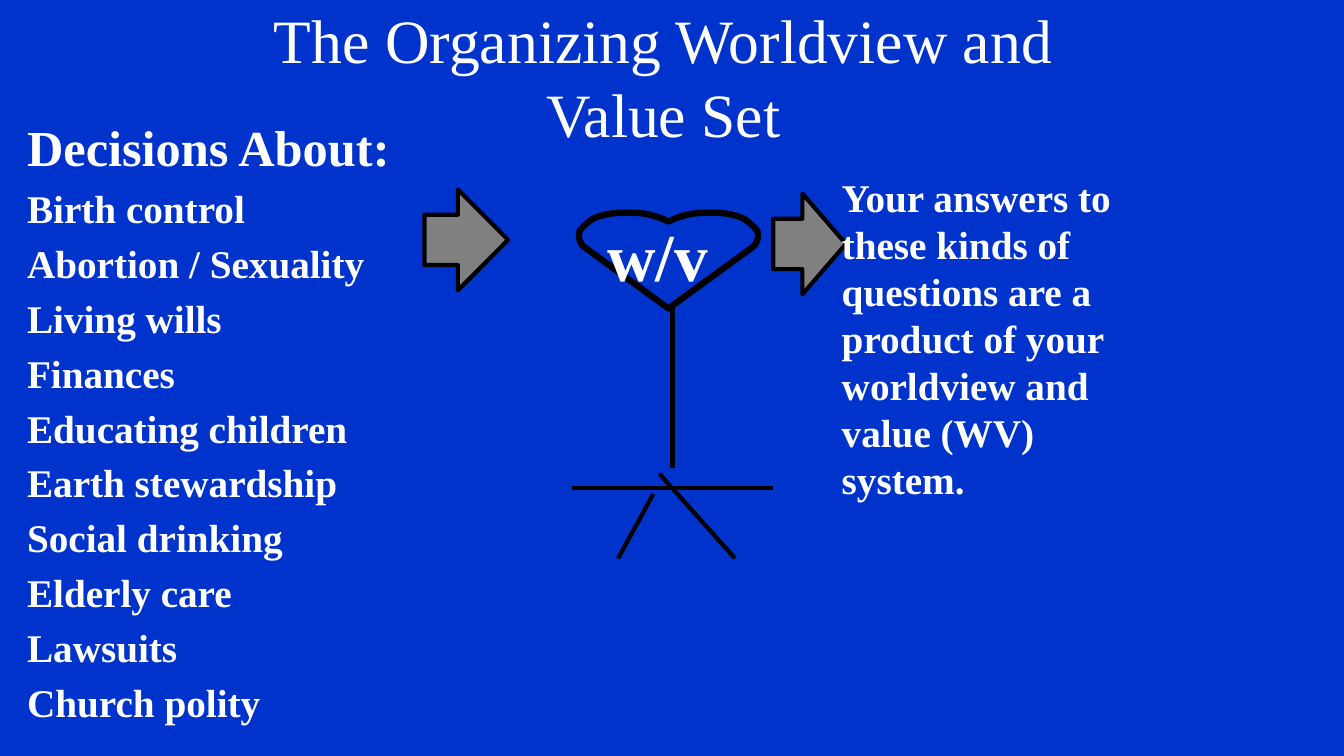
from dataclasses import dataclass

from lxml import etree
from pptx import Presentation
from pptx.dml.color import RGBColor
from pptx.enum.shapes import MSO_CONNECTOR, MSO_SHAPE
from pptx.enum.text import MSO_ANCHOR, MSO_AUTO_SIZE, PP_ALIGN
from pptx.oxml.ns import qn
from pptx.slide import Slide
from pptx.text.text import _Paragraph as Paragraph
from pptx.util import Inches, Pt

BLUE = RGBColor(0x00, 0x33, 0xCC)
WHITE = RGBColor(0xFF, 0xFF, 0xFF)
BLACK = RGBColor(0x00, 0x00, 0x00)
GRAY = RGBColor(0x80, 0x80, 0x80)
FONT = "Times New Roman"

Point = tuple[float, float]


@dataclass(frozen=True)
class Box:
    left: float
    top: float
    width: float
    height: float

    def lengths(self) -> tuple[Inches, ...]:
        return tuple(Inches(v) for v in (self.left, self.top, self.width, self.height))


@dataclass(frozen=True)
class Line:
    text: str
    size: int


@dataclass(frozen=True)
class TextBlock:
    box: Box
    lines: list[Line]


@dataclass(frozen=True)
class Stroke:
    start: Point
    end: Point


DECISIONS = [
    "Birth control", "Abortion / Sexuality", "Living wills", "Finances",
    "Educating children", "Earth stewardship", "Social drinking",
    "Elderly care", "Lawsuits", "Church polity",
]
ANSWER = ("Your answers to these kinds of questions are a product of "
          "your worldview and value (WV) system.")
TEXT_BLOCKS = [
    TextBlock(Box(0.17, 1.1, 4.58, 6.73),
              [Line("Decisions About:", 36)] + [Line(text, 28) for text in DECISIONS]),
    TextBlock(Box(8.25, 1.67, 3.42, 3.37), [Line(ANSWER, 28)]),
    TextBlock(Box(5.76, 2.08, 1.62, 0.91), [Line(" w/v", 48)]),
]
ARROWS = [Box(4.21, 1.88, 0.83, 1), Box(7.67, 1.92, 0.72, 1)]
STICK_STROKES = [
    Stroke((6.67, 3.06), (6.67, 4.64)),
    Stroke((6.48, 4.9), (6.13, 5.54)),
    Stroke((6.54, 4.7), (7.29, 5.54)),
    Stroke((5.67, 4.84), (7.67, 4.84)),
]

# Left half of the heart: Bezier segments from the notch, then the bottom tip.
HEART_CENTER = 6.63
HEART_NOTCH = (6.63, 2.2)
HEART_TIP = (6.63, 3.06)
HEART_CURVES = [
    ((6.6, 2.18), (6.52, 2.15), (6.48, 2.14)),
    ((6.38, 2.11), (6.29, 2.11), (6.18, 2.11)),
    ((6.08, 2.11), (5.98, 2.13), (5.9, 2.16)),
    ((5.83, 2.2), (5.78, 2.25), (5.75, 2.29)),
    ((5.73, 2.35), (5.75, 2.4), (5.78, 2.44)),
]
CURVE_STEPS = 8


def bezier(start: Point, first: Point, second: Point, end: Point) -> list[Point]:
    """Points along a cubic curve, without its start."""
    points = []
    for step in range(1, CURVE_STEPS + 1):
        t = step / CURVE_STEPS
        weights = ((1 - t) ** 3, 3 * t * (1 - t) ** 2, 3 * t * t * (1 - t), t ** 3)
        x, y = (sum(w * p[axis] for w, p in zip(weights, (start, first, second, end)))
                for axis in (0, 1))
        points.append((x, y))
    return points


def heart_outline() -> list[Point]:
    left = [HEART_NOTCH]
    for curve in HEART_CURVES:
        left += bezier(left[-1], *curve)
    right = [(2 * HEART_CENTER - x, y) for x, y in reversed(left[1:])]
    return left + [HEART_TIP] + right


def add_span(para: Paragraph, text: str, size: int, bold: bool) -> None:
    span = para.add_run()
    span.text = text
    span.font.name = FONT
    span.font.size = Pt(size)
    span.font.bold = bold
    span.font.color.rgb = WHITE


def add_title(page: Slide) -> None:
    title = page.shapes.title
    title.left, title.top, title.width, title.height = Box(2.33, 0.25, 8.5, 1).lengths()
    frame = title.text_frame
    frame.word_wrap = True
    frame.auto_size = MSO_AUTO_SIZE.NONE
    frame.vertical_anchor = MSO_ANCHOR.MIDDLE
    para = frame.paragraphs[0]
    para.alignment = PP_ALIGN.CENTER
    add_span(para, "The Organizing Worldview and Value Set", 44, False)


def add_heart(page: Slide) -> None:
    start, *others = [(Inches(x), Inches(y)) for x, y in heart_outline()]
    builder = page.shapes.build_freeform(*start)
    builder.add_line_segments(others, close=True)
    heart = builder.convert_to_shape()
    heart.shadow.inherit = False
    heart.fill.background()
    heart.line.color.rgb = BLACK
    heart.line.width = Pt(4.5)


def add_stroke(page: Slide, stroke: Stroke) -> None:
    ends = [Inches(v) for v in stroke.start + stroke.end]
    line = page.shapes.add_connector(MSO_CONNECTOR.STRAIGHT, *ends)
    line.line.color.rgb = BLACK
    line.line.width = Pt(3)
    etree.SubElement(line._element.spPr, qn("a:effectLst"))


def add_arrow(page: Slide, box: Box) -> None:
    arrow = page.shapes.add_shape(MSO_SHAPE.RIGHT_ARROW, *box.lengths())
    arrow.adjustments[0] = 0.5
    arrow.adjustments[1] = 0.6
    arrow.shadow.inherit = False
    arrow.fill.solid()
    arrow.fill.fore_color.rgb = GRAY
    arrow.line.color.rgb = BLACK
    arrow.line.width = Pt(3)


def add_text_block(page: Slide, block: TextBlock) -> None:
    frame = page.shapes.add_textbox(*block.box.lengths()).text_frame
    frame.word_wrap = True
    frame.auto_size = MSO_AUTO_SIZE.SHAPE_TO_FIT_TEXT
    for index, line in enumerate(block.lines):
        para = frame.add_paragraph() if index else frame.paragraphs[0]
        para.space_before = Pt(0.2 * line.size)
        add_span(para, line.text, line.size, True)


def main() -> None:
    deck = Presentation()
    deck.slide_width = Inches(13.33)
    deck.slide_height = Inches(7.5)
    page = deck.slides.add_slide(deck.slide_layouts.get_by_name("Title Only"))
    page.background.fill.solid()
    page.background.fill.fore_color.rgb = BLUE
    add_title(page)
    add_heart(page)
    for stroke in STICK_STROKES:
        add_stroke(page, stroke)
    for arrow in ARROWS:
        add_arrow(page, arrow)
    for block in TEXT_BLOCKS:
        add_text_block(page, block)
    deck.save("out.pptx")


if __name__ == "__main__":
    main()
